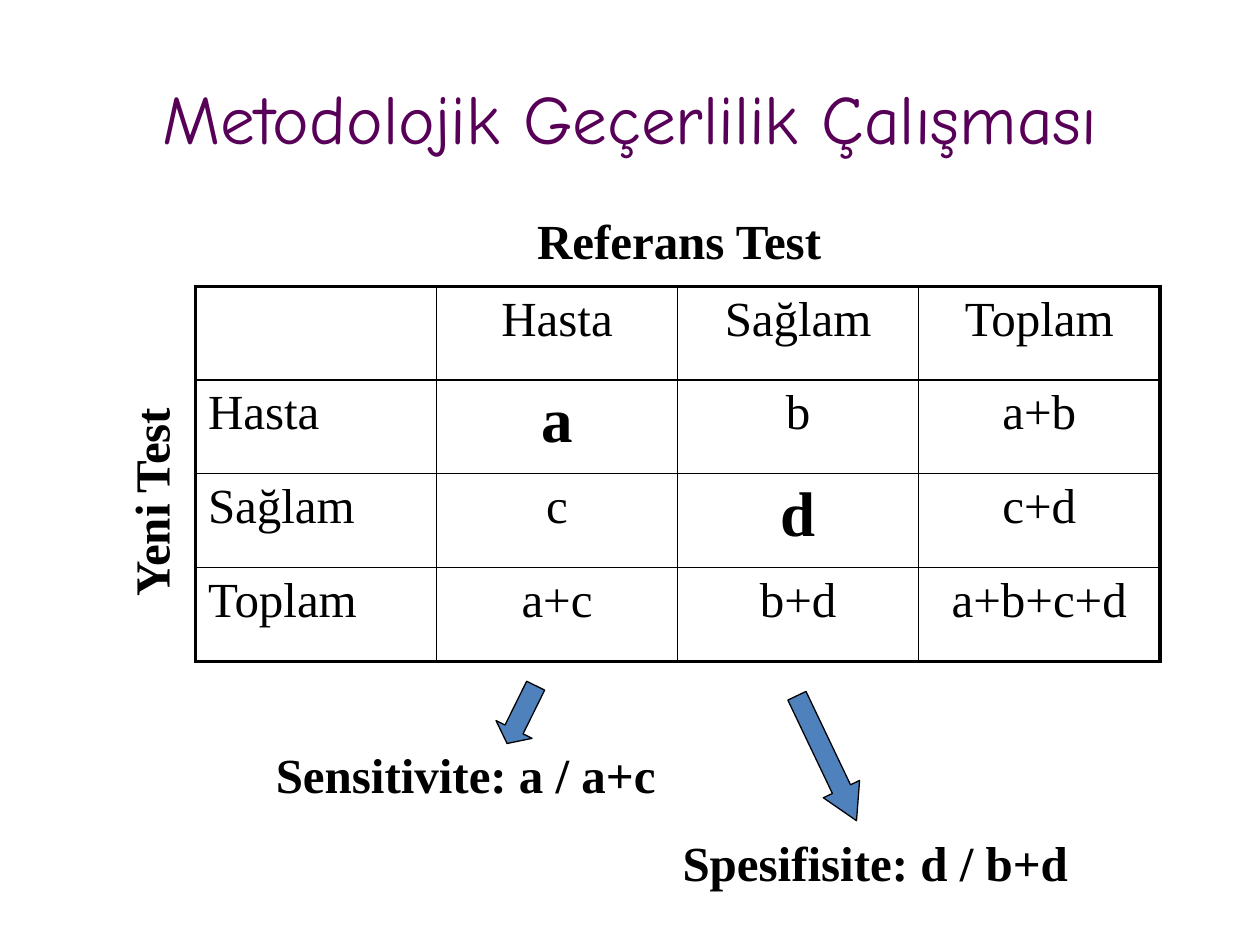
from lxml import etree
from pptx import Presentation
from pptx.dml.color import RGBColor
from pptx.enum import shapes, text
from pptx.oxml.ns import qn
from pptx.util import Cm, Pt

BLACK = RGBColor(0x00, 0x00, 0x00)
PURPLE = RGBColor(0x58, 0x00, 0x58)
BLUE = RGBColor(0x4F, 0x81, 0xBD)
LEFT, CENTER = text.PP_ALIGN.LEFT, text.PP_ALIGN.CENTER

ROWS = [
    ["", "Hasta", "Sağlam", "Toplam"],
    ["Hasta", "a", "b", "a+b"],
    ["Sağlam", "c", "d", "c+d"],
    ["Toplam", "a+c", "b+d", "a+b+c+d"],
]
CORRECT = ("a", "d")
THIN, THICK = Pt(1), Pt(2.25)


def write(frame, words, size=28, font="Times New Roman", color=BLACK,
          bold=False, align=CENTER, before=0):
    para = frame.paragraphs[0]
    para.alignment = align
    para.space_before = Pt(before)
    span = para.add_run()
    span.text = words
    span.font.size = Pt(size)
    span.font.name = font
    span.font.bold = bold
    span.font.color.rgb = color


def set_title(page, words):
    title = page.shapes.title
    title.left, title.top = Cm(1.27), Cm(0.76)
    title.width, title.height = Cm(22.86), Cm(3.18)
    title.text_frame.vertical_anchor = text.MSO_ANCHOR.MIDDLE
    write(title.text_frame, words, size=39.6, font="Comic Neue", color=PURPLE)


def add_label(page, words, left, top, width, align=LEFT, rotation=0):
    box = page.shapes.add_textbox(Cm(left), Cm(top), Cm(width), Cm(1.45))
    box.rotation = rotation
    box.text_frame.word_wrap = True
    write(box.text_frame, words, bold=True, align=align, before=4)


def add_arrow(page, left, top, length, rotation, head):
    arrow = page.shapes.add_shape(shapes.MSO_SHAPE.RIGHT_ARROW, Cm(left),
                                  Cm(top), Cm(length), Cm(0.81))
    arrow.rotation = rotation
    arrow.adjustments[1] = head
    arrow.shadow.inherit = False
    arrow.fill.solid()
    arrow.fill.fore_color.rgb = BLUE
    arrow.line.color.rgb = BLACK
    arrow.line.width = Pt(0.75)


def set_borders(cell, **widths):
    """Draw black cell sides; keys are L, R, T and B, in schema order."""
    properties = cell._tc.get_or_add_tcPr()
    for index, (side, width) in enumerate(widths.items()):
        line = etree.Element(qn(f"a:ln{side}"), w=str(width))
        fill = etree.SubElement(line, qn("a:solidFill"))
        etree.SubElement(fill, qn("a:srgbClr"), val=str(BLACK))
        properties.insert(index, line)


def add_result_table(page):
    last = len(ROWS) - 1
    table = page.shapes.add_table(len(ROWS), len(ROWS[0]), Cm(3.94), Cm(5.77),
                                  Cm(19.44), Cm(7.56)).table
    table.first_row = table.horz_banding = False
    for r, row in enumerate(ROWS):
        for c, words in enumerate(row):
            cell = table.cell(r, c)
            cell.fill.background()
            set_borders(cell,
                        L=THICK if c == 0 else THIN,
                        R=THICK if c == last else THIN,
                        T=THICK if r == 0 else THIN,
                        B=THICK if r == last else THIN)
            if words:
                correct = words in CORRECT
                write(cell.text_frame, words, size=36 if correct else 28,
                      bold=correct, align=CENTER if c else LEFT)


def main():
    deck = Presentation()
    deck.slide_width, deck.slide_height = Cm(25.4), Cm(19.05)
    page = deck.slides.add_slide(deck.slide_layouts[5])
    set_title(page, "Metodolojik Geçerlilik Çalışması")
    add_result_table(page)
    add_label(page, "Referans Test", 8.89, 4.11, 9.6, align=CENTER)
    add_label(page, "Yeni Test", 0.03, 9.4, 6, align=CENTER, rotation=270)
    add_label(page, "Sensitivite: a / a+c", 5.31, 14.88, 8.4)
    add_arrow(page, 9.86, 14, 1.3, 116.3, 0.39)
    add_label(page, "Spesifisite: d / b+d", 13.51, 16.66, 8.61)
    add_arrow(page, 15.27, 14.88, 2.79, 64.5, 0.87)
    deck.save("out.pptx")


if __name__ == "__main__":
    main()
